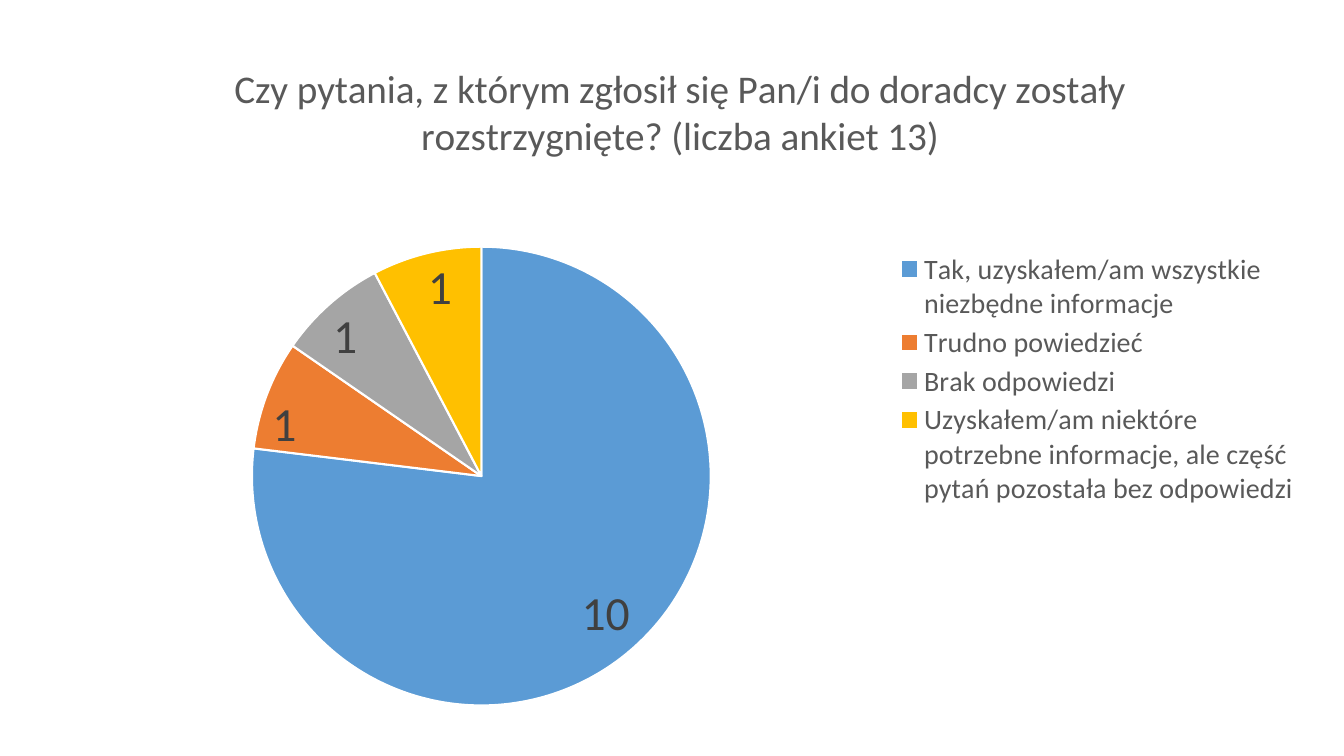
from lxml import etree
from pptx import Presentation
from pptx import util as u
from pptx.chart.data import CategoryChartData
from pptx.dml.color import RGBColor
from pptx.enum import chart as charts
from pptx.oxml.ns import qn

PX = 9525  # EMU per px, slide of 1280 by 720 px
FONT = "Calibri"
COLORS = {
    "text": "595959",
    "label": "404040",
    "border": "FFFFFF",
}
QUESTION = ("Czy pytania, z którym zgłosił się Pan/i do doradcy zostały "
            "rozstrzygnięte? (liczba ankiet 13)")
# answer, number of surveys, slice colour
ANSWERS = [
    ("Tak, uzyskałem/am wszystkie niezbędne informacje", 10, "5B9BD5"),
    ("Trudno powiedzieć", 1, "ED7D31"),
    ("Brak odpowiedzi", 1, "A5A5A5"),
    ("Uzyskałem/am niektóre potrzebne informacje, ale część pytań "
     "pozostała bez odpowiedzi", 1, "FFC000"),
]


def style_font(font, size, color):
    values = {"name": FONT, "size": u.Pt(size), "bold": False}
    for name, value in values.items():
        setattr(font, name, value)
    font.color.rgb = RGBColor.from_string(color)


def place_part(part, index, part_box, chart_box, inner=False):
    """Give a chart part a manual layout, as fractions of the chart's box."""
    for old_layout in part.findall(qn("c:layout")):
        part.remove(old_layout)
    layout = etree.Element(qn("c:layout"))
    part.insert(index, layout)
    manual = etree.SubElement(layout, qn("c:manualLayout"))
    left, top, width, height = part_box
    settings = {"layoutTarget": "inner"} if inner else {}
    settings.update(xMode="edge", yMode="edge",
                    x=left / chart_box[2], y=top / chart_box[3],
                    w=width / chart_box[2], h=height / chart_box[3])
    for name, value in settings.items():
        text = value if isinstance(value, str) else f"{value:.4f}"
        etree.SubElement(manual, qn("c:" + name)).set("val", text)


def add_answer_pie(slide, box):
    data = CategoryChartData()
    data.categories = [answer for answer, _, _ in ANSWERS]
    data.add_series("Series 1", [count for _, count, _ in ANSWERS])
    frame = slide.shapes.add_chart(charts.XL_CHART_TYPE.PIE,
                                   *[length * PX for length in box], data)
    chart = frame.chart
    style_font(chart.font, 10, COLORS["text"])

    # Title
    chart.has_title = True
    title = chart.chart_title
    title.include_in_layout = False
    title.text_frame.text = QUESTION
    style_font(title.text_frame.paragraphs[0].runs[0].font, 28, COLORS["text"])

    # Legend
    chart.has_legend = True
    legend = chart.legend
    legend.position = charts.XL_LEGEND_POSITION.RIGHT
    legend.include_in_layout = False
    style_font(legend.font, 20, COLORS["text"])
    place_part(legend._element, 1, (799, 202, 390, 250), box)

    # Slices
    plot = chart.plots[0]
    plot.vary_by_categories = True
    for index, (_, _, color) in enumerate(ANSWERS):
        point = plot.series[0].points[index].format
        point.fill.solid()
        point.fill.fore_color.rgb = RGBColor.from_string(color)
        point.line.color.rgb = RGBColor.from_string(COLORS["border"])
        point.line.width = u.Pt(1.5)
    plot_area = chart._chartSpace.find(".//" + qn("c:plotArea"))
    place_part(plot_area, 0, (189, 201, 437, 437), box, inner=True)

    # Value labels
    labels = plot.series[0].data_labels
    label_settings = {
        "show_value": True,
        "show_percentage": False,
        "show_category_name": False,
        "show_legend_key": False,
        "position": charts.XL_LABEL_POSITION.INSIDE_END,
    }
    for name, value in label_settings.items():
        setattr(labels, name, value)
    style_font(labels.font, 34, COLORS["label"])


def main():
    presentation = Presentation()
    presentation.slide_width = 1280 * PX
    presentation.slide_height = 720 * PX
    slide = presentation.slides.add_slide(presentation.slide_layouts[6])
    add_answer_pie(slide, (51, 34, 1193, 654))
    presentation.save("out.pptx")


if __name__ == "__main__":
    main()
